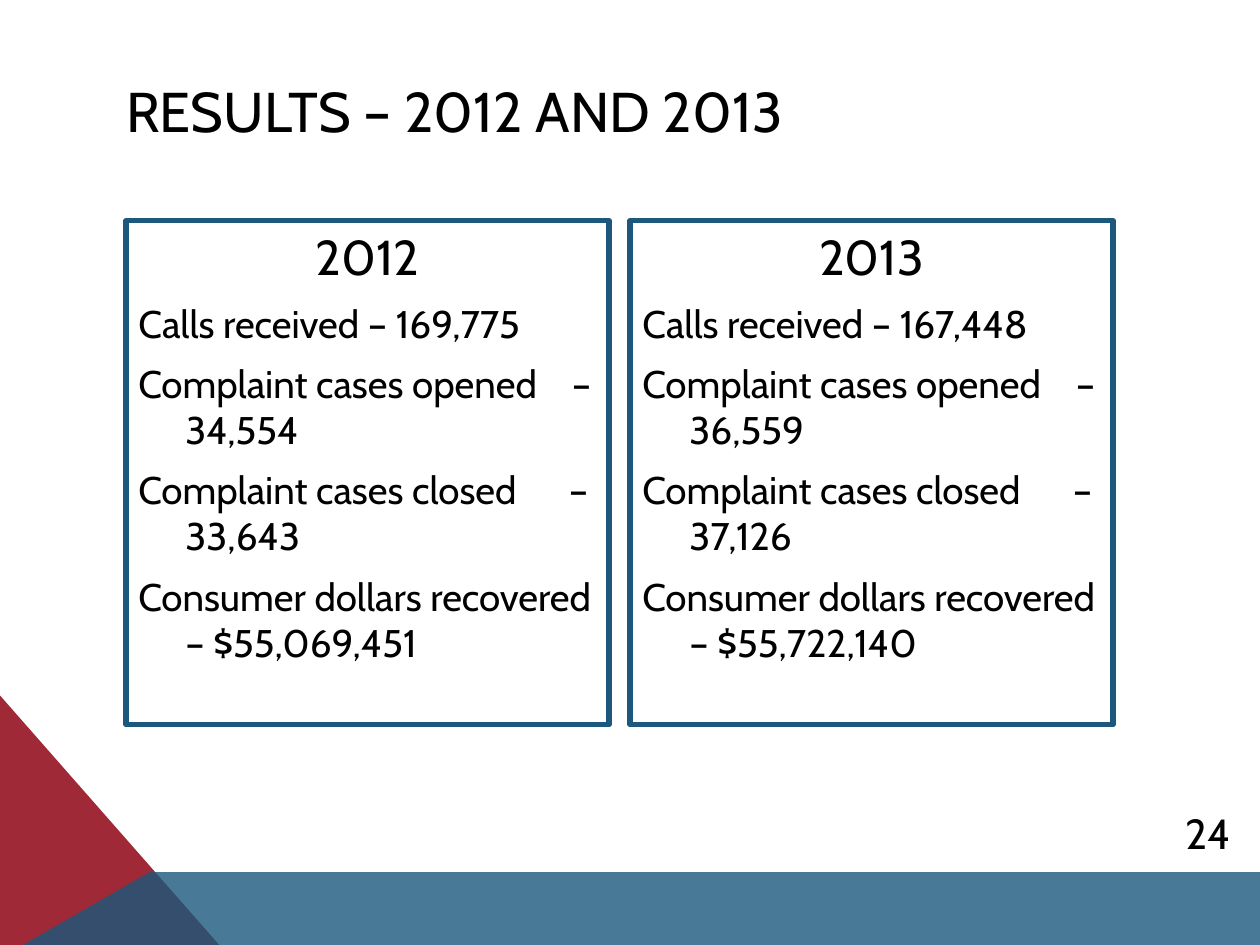
"""Build the slide comparing complaint results for 2012 and 2013."""
import pptx
import pptx.dml.color
import pptx.enum.shapes
import pptx.enum.text
import pptx.util
from lxml import etree
from pptx.util import Cm, Pt

COLOURS = {"text": "000000", "red": "9F2936", "blue": "1B587C"}
FONT = "Cabin"
ALIGN = pptx.enum.text.PP_ALIGN
ANCHOR = pptx.enum.text.MSO_ANCHOR
SHAPES = pptx.enum.shapes.MSO_SHAPE


def colour(name):
    """Return the named colour."""
    return pptx.dml.color.RGBColor.from_string(COLOURS[name])


def add_span(para, text, size):
    """Add a formatted run to a paragraph."""
    span = para.add_run()
    span.text = text
    span.font.name = FONT
    span.font.size = Pt(size)
    span.font.color.rgb = colour("text")
    return span


deck = pptx.Presentation()
deck.slide_width, deck.slide_height = Cm(25.4), Cm(19.05)
page = deck.slides.add_slide(deck.slide_layouts[5])

decorations = [
    ("red", [(0, 14.02), (4.42, 19.05), (0, 19.05)], 100),
    ("blue", [(0.46, 19.05), (3.02, 17.58), (25.4, 17.58), (25.4, 19.05)], 80),
]
for name, points, opacity in decorations:
    corners = [(Cm(x), Cm(y)) for x, y in points]
    builder = page.shapes.build_freeform(*corners[0])
    builder.add_line_segments(corners[1:], close=True)
    area = builder.convert_to_shape()
    area.shadow.inherit = False
    area.fill.solid()
    area.fill.fore_color.rgb = colour(name)
    area.line.fill.background()
    if opacity < 100:
        fill_colour = area.fill._xPr.find(".//" + pptx.oxml.ns.qn("a:srgbClr"))
        alpha = etree.SubElement(fill_colour, pptx.oxml.ns.qn("a:alpha"))
        alpha.set("val", str(opacity * 1000))

results = [
    ("2012", "169,775", "34,554", "33,643", "$55,069,451"),
    ("2013", "167,448", "36,559", "37,126", "$55,722,140"),
]
labels = [
    ("Calls received", 0),
    ("Complaint cases opened", 15),
    ("Complaint cases closed", 25),
    ("Consumer dollars recovered", 0),
]
for column, (year, *values) in enumerate(results):
    box = page.shapes.add_shape(
        SHAPES.RECTANGLE, Cm(2.54 + column * 10.16), Cm(4.45), Cm(9.74), Cm(10.16)
    )
    box.shadow.inherit = False
    box.fill.background()
    box.line.color.rgb = colour("blue")
    box.line.width = Pt(3)
    frame = box.text_frame
    frame.word_wrap = True
    frame.vertical_anchor = ANCHOR.TOP
    heading = frame.paragraphs[0]
    heading.alignment = ALIGN.CENTER
    add_span(heading, year, 28)
    for (label, gap), value in zip(labels, values):
        para = frame.add_paragraph()
        para.alignment = ALIGN.LEFT
        add_span(para, label, 22)
        space = add_span(para, " ", 22)
        if gap:
            space.font._element.set("spc", str(gap * 100))
        add_span(para, f"– {value}", 22)
    for para in frame.paragraphs:
        para.space_before = Pt(8)
        properties = para._p.get_or_add_pPr()
        properties.set("marL", str(Cm(0.95)))
        properties.set("indent", str(-Cm(0.95)))

title = page.shapes.title
title.left, title.top, title.width, title.height = Cm(2.29), Cm(1.47), Cm(20.88), Cm(1.52)
title.text_frame.word_wrap = True
title.text_frame.vertical_anchor = ANCHOR.MIDDLE
title_para = title.text_frame.paragraphs[0]
title_para.alignment = ALIGN.LEFT
add_span(title_para, "RESULTS – 2012 AND 2013", 32)

number = page.shapes.add_shape(SHAPES.OVAL, Cm(23.5), Cm(16.08), Cm(1.7), Cm(1.4))
number.shadow.inherit = False
number.fill.background()
number.line.fill.background()
frame = number.text_frame
frame.margin_left = frame.margin_right = frame.margin_top = frame.margin_bottom = Cm(0.03)
frame.vertical_anchor = ANCHOR.MIDDLE
frame.paragraphs[0].alignment = ALIGN.CENTER
add_span(frame.paragraphs[0], "24", 24)

deck.save("out.pptx")
